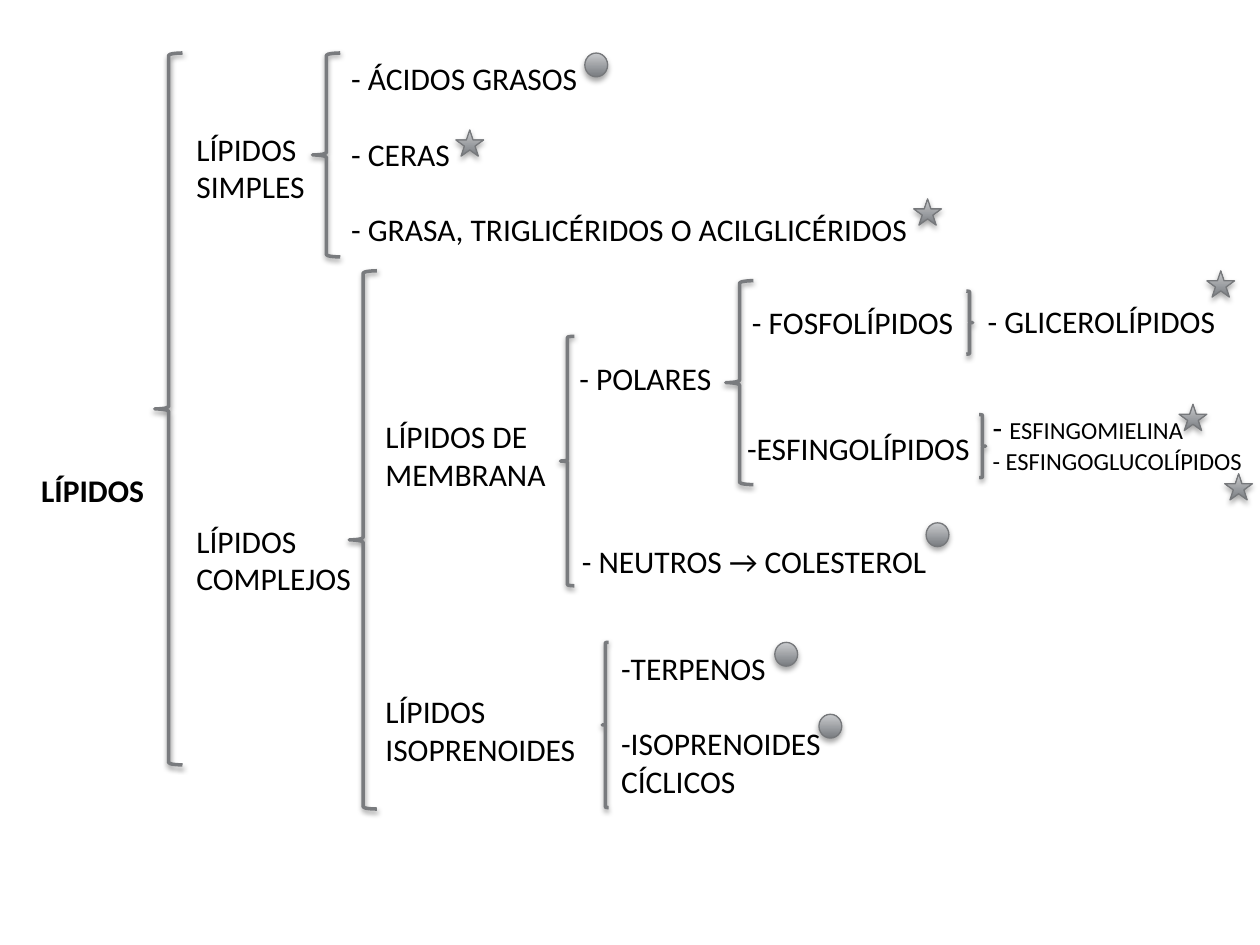
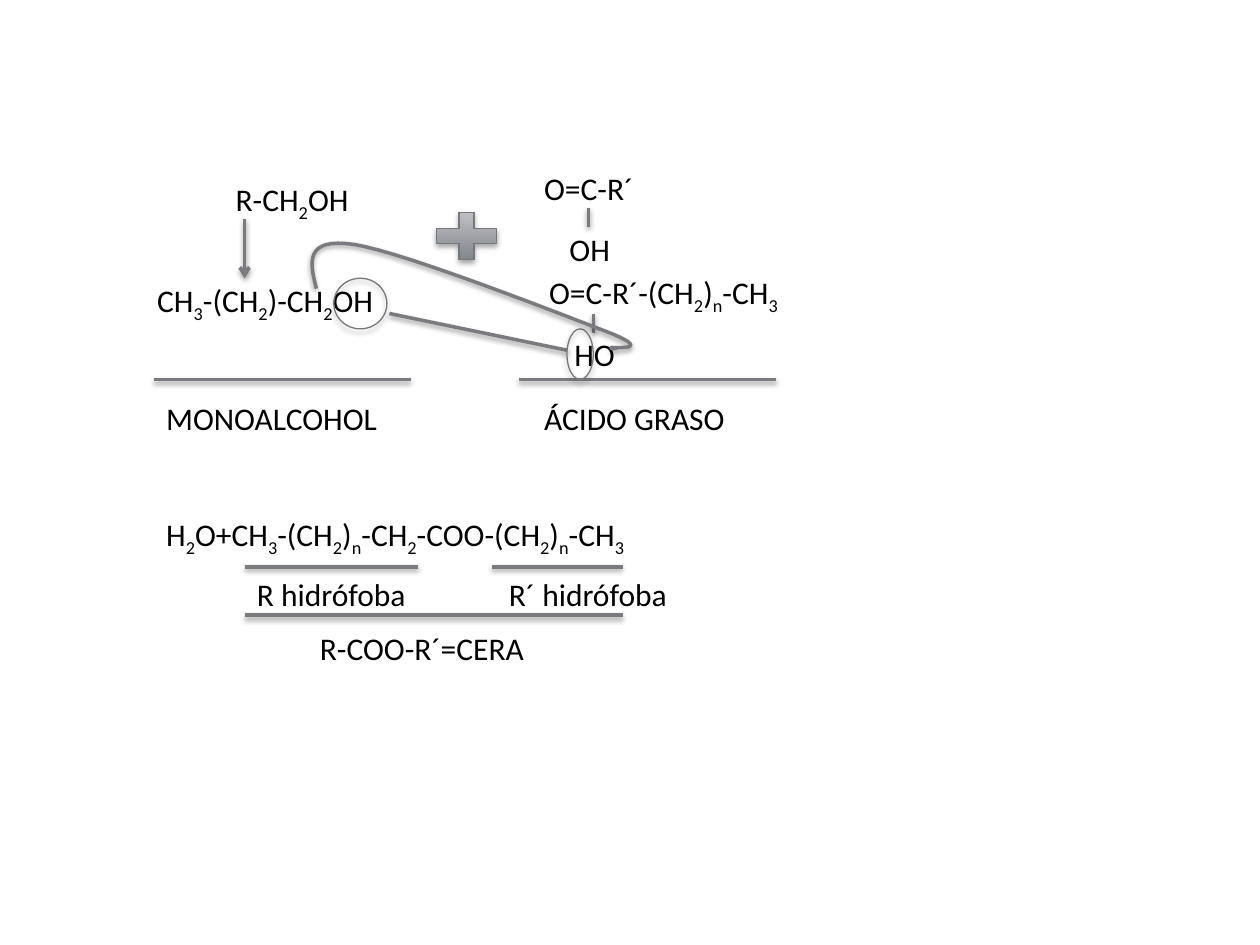
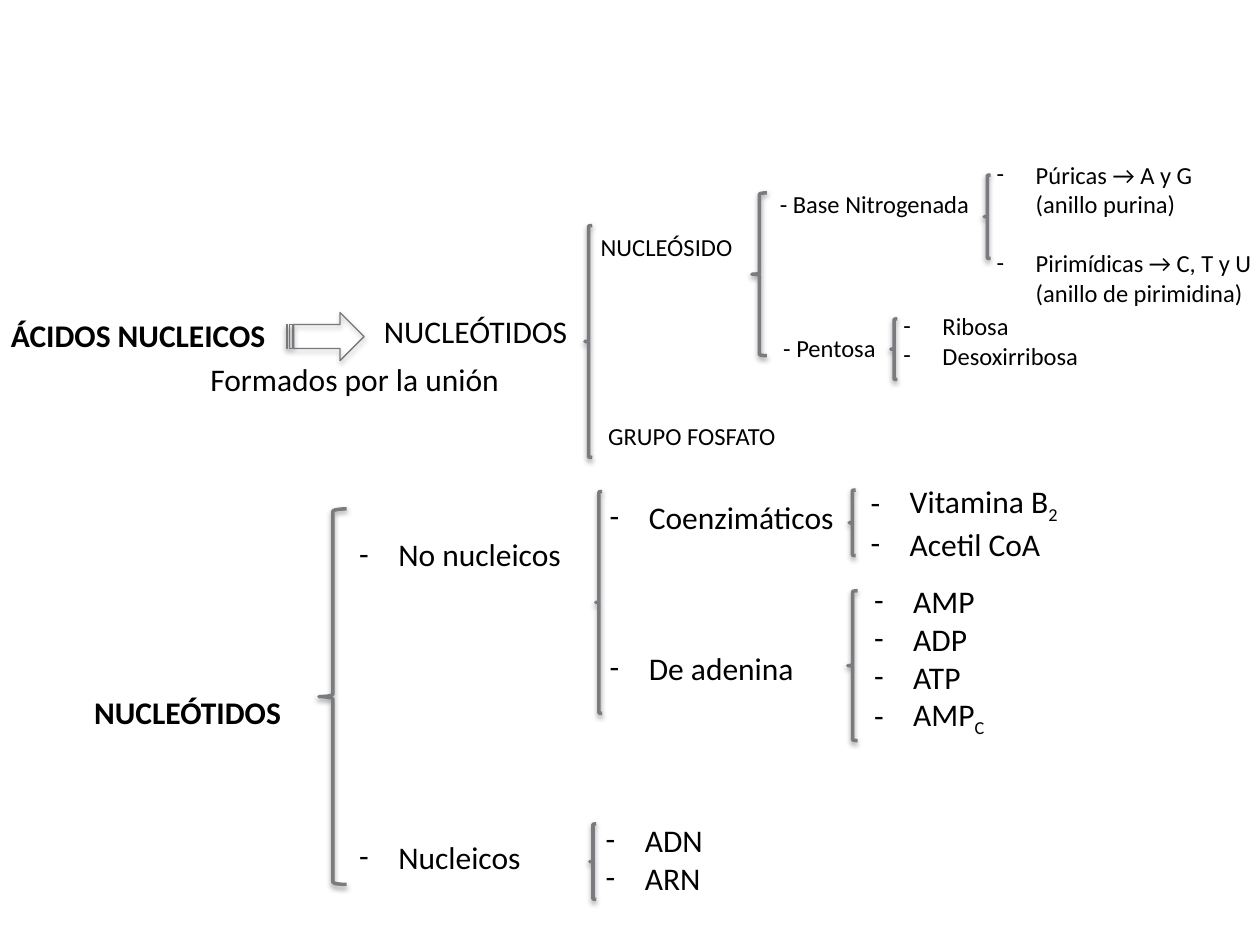
import lxml.etree
import pptx
import pptx.dml.color
import pptx.enum.shapes
import pptx.oxml.ns
import pptx.util

Cm = pptx.util.Cm
Pt = pptx.util.Pt
qn = pptx.oxml.ns.qn
PRESET = pptx.enum.shapes.MSO_SHAPE

FONT = "Calibri"
TEXT_COLOR = "000000"
BRACE_COLOR = "797B7E"
EDGE_COLOR = "76787B"
GRADIENT = ("787B7F", "C9CBCE")
STAR_SIZE = (0.56, 0.53)
BALL_SIZE = (0.46, 0.48)
DASH_INDENT = 0.79
BODY_SIZE = 18
LINE_HEIGHT = {18: 0.77, 14: 0.6}

PLAIN = {}
BOLD = {"bold": True}
SMALL = {"size": 14}
DASHED = {"dashed": True}
SMALL_DASHED = {"dashed": True, "size": 14}
TWO_LINES = {"lines": 2}

LIPID_TEXTS = [
    (0.58, 9.37, 15.88, "LÍPIDOS", BOLD),
    (3.71, 2.49, 2.72, "LÍPIDOS\nSIMPLES", PLAIN),
    (6.83, 1.07, 11.84, "- ÁCIDOS GRASOS\n- CERAS\n- GRASA, TRIGLICÉRIDOS O ACILGLICÉRIDOS", {"gap": 1}),
    (3.71, 10.39, 3.66, "LÍPIDOS\nCOMPLEJOS", PLAIN),
    (7.52, 8.28, 3.76, "LÍPIDOS DE\nMEMBRANA", PLAIN),
    (11.43, 7.11, 3.2, "- POLARES", PLAIN),
    (14.91, 5.99, 4.6, "- FOSFOLÍPIDOS", PLAIN),
    (19.66, 5.97, 6.12, "- GLICEROLÍPIDOS", PLAIN),
    (11.48, 10.8, 7.57, "- NEUTROS → COLESTEROL", PLAIN),
    (7.52, 13.82, 4.37, "LÍPIDOS\nISOPRENOIDES", PLAIN),
    (12.27, 12.95, 5.82, "-TERPENOS\n-ISOPRENOIDES CÍCLICOS", {"gap": 1, "lines": 4}),
    (14.81, 8.53, 5.05, "-ESFINGOLÍPIDOS", PLAIN),
    (19.76, 8.1, 5.6, "- |ESFINGOMIELINA\n- ESFINGOGLUCOLÍPIDOS", SMALL),
]
LIPID_LEFT_BRACES = [
    (6.3, 1.07, 0.56, 4.11),
    (14.63, 5.66, 0.56, 4.11),
    (11.3, 6.78, 0.28, 5.03),
    (3.12, 1.07, 0.56, 14.35),
    (7.04, 5.46, 0.56, 10.85),
    (12.14, 12.95, 0.13, 3.33),
]
LIPID_RIGHT_BRACES = [(19.48, 5.87, 0.13, 1.27), (19.74, 8.36, 0.13, 1.27)]
STARS = [(9.19, 2.62), (18.42, 4.01), (24.33, 5.46), (23.77, 8.15), (24.69, 9.55)]
BALLS = [(11.79, 1.07), (18.67, 10.54), (15.62, 12.95), (16.51, 14.4)]

WAX_TEXTS = [
    (4.5, 3.51, 2.84, "R-CH_2OH", TWO_LINES),
    (2.92, 5.54, 5.0, "CH_3-(CH_2)-CH_2OH", PLAIN),
    (10.72, 3.28, 2.34, "O=C-R´", TWO_LINES),
    (11.23, 4.52, 1.35, "OH", PLAIN),
    (10.82, 5.38, 5.26, "O=C-R´-(CH_2)_n-CH_3", TWO_LINES),
    (11.33, 6.63, 1.35, "HO", PLAIN),
    (3.1, 7.92, 12.98, "MONOALCOHOL\tÁCIDO GRASO", {"tab": 7.62}),
    (3.1, 10.26, 10.06, "H_2O+CH_3-(CH_2)_n-CH_2-COO-(CH_2)_n-CH_3", PLAIN),
    (4.93, 11.46, 10.85, "R hidrófoba\tR´ hidrófoba", {"tab": 5.08}),
    (6.2, 12.55, 4.67, "R-COO-R´=CERA", PLAIN),
]
EXPANSION_ARROW = (4.93, 4.42, 4.93, 5.61)
WAX_LINES = [
    (11.86, 4.19, 11.86, 4.57),
    (11.96, 6.32, 11.96, 6.71),
    (3.1, 7.65, 8.28, 7.65),
    (10.46, 7.65, 15.65, 7.65),
    (7.85, 6.32, 11.43, 7.06),
    (4.93, 11.43, 8.43, 11.43),
    (9.91, 11.43, 12.55, 11.43),
    (4.93, 12.4, 12.55, 12.4),
]
PLUS = (8.59, 4.11, 1.63, 1.3)
REACTING_GROUPS = [(6.73, 5.61, 1.07, 1.02), (11.43, 6.63, 0.53, 1.02)]
BOND_START = (6.38, 5.82)
BOND_CURVES = [
    ((6.25, 5.31), (6.12, 4.78), (7.14, 4.93)),
    ((8.13, 5.08), (11.48, 6.4), (12.34, 6.73)),
    ((13.21, 7.09), (12.29, 6.99), (12.32, 7.01)),
    ((12.32, 7.06), (12.45, 7.01), (12.45, 7.01)),
]

NUCLEIC_TEXTS = [
    (-0.03, 6.25, 5.72, "ÁCIDOS NUCLEICOS", {"bold": True, "lines": 2}),
    (7.49, 6.17, 4.27, "NUCLEÓTIDOS", PLAIN),
    (3.99, 7.14, 6.4, "Formados por la unión", PLAIN),
    (12.01, 8.36, 4.01, "GRUPO FOSFATO", SMALL),
    (11.86, 4.55, 3.2, "NUCLEÓSIDO", SMALL),
    (15.47, 3.68, 4.37, "- Base Nitrogenada", SMALL),
    (15.54, 6.58, 2.41, "- Pentosa", SMALL),
    (17.96, 6.15, 4.04, "Ribosa\nDesoxirribosa", SMALL_DASHED),
    (19.84, 3.1, 5.72, "Púricas → A y G\n(anillo purina)\nPirimídicas → C, T y U\n(anillo de pirimidina)",
     {**SMALL_DASHED, "gap": 1}),
    (1.65, 13.84, 4.34, "NUCLEÓTIDOS", BOLD),
    (12.04, 9.91, 5.08, "Coenzimáticos\nDe adenina", {**DASHED, "gap": 3}),
    (17.3, 9.6, 4.37, "Vitamina B_2\nAcetil CoA", DASHED),
    (17.37, 11.61, 2.79, "AMP\nADP\nATP\nAMP_C", DASHED),
    (6.99, 10.67, 4.65, "No nucleicos\nNucleicos", {**DASHED, "gap": 7}),
    (11.96, 16.43, 2.46, "ADN\nARN", DASHED),
]
NUCLEIC_BRACES = [
    (11.79, 4.55, 0.15, 4.67),
    (15.16, 3.89, 0.3, 3.28),
    (17.96, 6.43, 0.13, 1.22),
    (19.84, 3.53, 0.13, 1.68),
    (17.12, 9.88, 0.13, 1.32),
    (17.09, 11.91, 0.2, 3.02),
    (6.43, 10.26, 0.56, 7.57),
    (11.89, 16.61, 0.13, 1.52),
    (12.01, 9.91, 0.13, 4.47),
]
UNION_ARROW = (5.77, 6.3, 1.57, 0.97)


def color(value):
    return pptx.dml.color.RGBColor.from_string(value)


def add_element(parent, tag, **attributes):
    return lxml.etree.SubElement(parent, qn(tag), {name: str(value) for name, value in attributes.items()})


def set_line(shape, line_color, width):
    shape.line.color.rgb = color(line_color)
    shape.line.width = Pt(width)


def add_shadow(shape, distance, opacity):
    effects = add_element(shape.element.spPr, "a:effectLst")
    shadow = add_element(effects, "a:outerShdw", blurRad=Pt(3.1), dist=Pt(distance), dir=5400000, rotWithShape=0)
    shadow_color = add_element(shadow, "a:srgbClr", val="000000")
    add_element(shadow_color, "a:alpha", val=opacity * 1000)


def draw_stroke(shape):
    set_line(shape, BRACE_COLOR, 2)
    add_shadow(shape, 1.6, 38)


def add_shape(slide, preset, box):
    return slide.shapes.add_shape(preset, *(Cm(length) for length in box))


def add_brace(slide, preset, box):
    brace = add_shape(slide, preset, box)
    brace.fill.background()
    draw_stroke(brace)


def add_symbol(slide, preset, box, filled=True):
    symbol = add_shape(slide, preset, box)
    if filled:
        symbol.fill.gradient()
        symbol.fill.gradient_angle = 90
        for stop, stop_color in zip(symbol.fill.gradient_stops, GRADIENT):
            stop.color.rgb = color(stop_color)
    else:
        symbol.fill.background()
    set_line(symbol, EDGE_COLOR, 0.75)
    add_shadow(symbol, 1.8, 35)


def add_line(slide, ends, arrow=False):
    straight = pptx.enum.shapes.MSO_CONNECTOR.STRAIGHT
    connector = slide.shapes.add_connector(straight, *(Cm(length) for length in ends))
    draw_stroke(connector)
    if arrow:
        add_element(connector.element.spPr.find(qn("a:ln")), "a:tailEnd", type="arrow")


def curve_points(start, curves, steps=16):
    for first, second, end in curves:
        for step in range(1, steps + 1):
            t = step / steps
            weights = ((1 - t) ** 3, 3 * t * (1 - t) ** 2, 3 * t ** 2 * (1 - t), t ** 3)
            corners = (start, first, second, end)
            yield tuple(Cm(sum(w * corner[axis] for w, corner in zip(weights, corners))) for axis in (0, 1))
        start = end


def add_curve(slide, start, curves):
    builder = slide.shapes.build_freeform(Cm(start[0]), Cm(start[1]))
    builder.add_line_segments(list(curve_points(start, curves)), close=False)
    curve = builder.convert_to_shape()
    curve.fill.background()
    draw_stroke(curve)


def split_runs(text, size):
    lead, _, body = text.rpartition("|")
    head, *tails = body.split("_")
    pieces = [(lead, BODY_SIZE, False), (head, size, False)]
    for tail in tails:
        pieces += [(tail[0], size, True), (tail[1:], size, False)]
    return [piece for piece in pieces if piece[0]]


def fill_paragraph(paragraph, text, size, bold):
    for content, run_size, subscript in split_runs(text, size):
        run = paragraph.add_run()
        run.text = content
        run.font.name = FONT
        run.font.size = Pt(run_size)
        run.font.bold = bold
        run.font.color.rgb = color(TEXT_COLOR)
        if subscript:
            run.font._element.set("baseline", "-25000")


def add_text(slide, left, top, width, text, size=BODY_SIZE, bold=False, dashed=False, gap=0, lines=None, tab=None):
    rows = text.split("\n")
    starts = [not row.startswith("(") for row in rows]
    lines = lines or len(rows) + gap * (sum(starts) - 1)
    height = 0.25 + lines * LINE_HEIGHT[size]
    frame = slide.shapes.add_textbox(Cm(left), Cm(top), Cm(width), Cm(height)).text_frame
    frame.word_wrap = True
    for index, (row, starts_item) in enumerate(zip(rows, starts)):
        paragraph = frame.add_paragraph() if index else frame.paragraphs[0]
        fill_paragraph(paragraph, row, size, bold)
        if index and gap and starts_item:
            paragraph.space_before = Pt(round(gap * size * 1.2, 1))
        properties = paragraph._p.get_or_add_pPr()
        if dashed:
            properties.set("marL", str(Cm(DASH_INDENT)))
            properties.set("indent", str(-Cm(DASH_INDENT) if starts_item else 0))
            if starts_item:
                add_element(properties, "a:buFont", typeface=FONT)
                add_element(properties, "a:buChar", char="-")
        if tab:
            add_element(add_element(properties, "a:tabLst"), "a:tab", pos=Cm(tab), algn="l")


def add_slide(presentation, texts):
    slide = presentation.slides.add_slide(presentation.slide_layouts[6])
    for left, top, width, text, style in texts:
        add_text(slide, left, top, width, text, **style)
    return slide


def build_lipids(presentation):
    slide = add_slide(presentation, LIPID_TEXTS)
    for preset, boxes in ((PRESET.LEFT_BRACE, LIPID_LEFT_BRACES), (PRESET.RIGHT_BRACE, LIPID_RIGHT_BRACES)):
        for box in boxes:
            add_brace(slide, preset, box)
    for preset, places, size in ((PRESET.STAR_5_POINT, STARS, STAR_SIZE), (PRESET.OVAL, BALLS, BALL_SIZE)):
        for place in places:
            add_symbol(slide, preset, place + size)


def build_wax(presentation):
    slide = add_slide(presentation, WAX_TEXTS)
    add_line(slide, EXPANSION_ARROW, arrow=True)
    for ends in WAX_LINES:
        add_line(slide, ends)
    add_symbol(slide, PRESET.MATH_PLUS, PLUS)
    for box in REACTING_GROUPS:
        add_symbol(slide, PRESET.OVAL, box, filled=False)
    add_curve(slide, BOND_START, BOND_CURVES)


def build_nucleic_acids(presentation):
    slide = add_slide(presentation, NUCLEIC_TEXTS)
    add_symbol(slide, PRESET.STRIPED_RIGHT_ARROW, UNION_ARROW, filled=False)
    for box in NUCLEIC_BRACES:
        add_brace(slide, PRESET.LEFT_BRACE, box)


def main():
    presentation = pptx.Presentation()
    presentation.slide_width = Cm(25.4)
    presentation.slide_height = Cm(19.05)
    build_lipids(presentation)
    build_wax(presentation)
    build_nucleic_acids(presentation)
    presentation.save("out.pptx")


if __name__ == "__main__":
    main()
